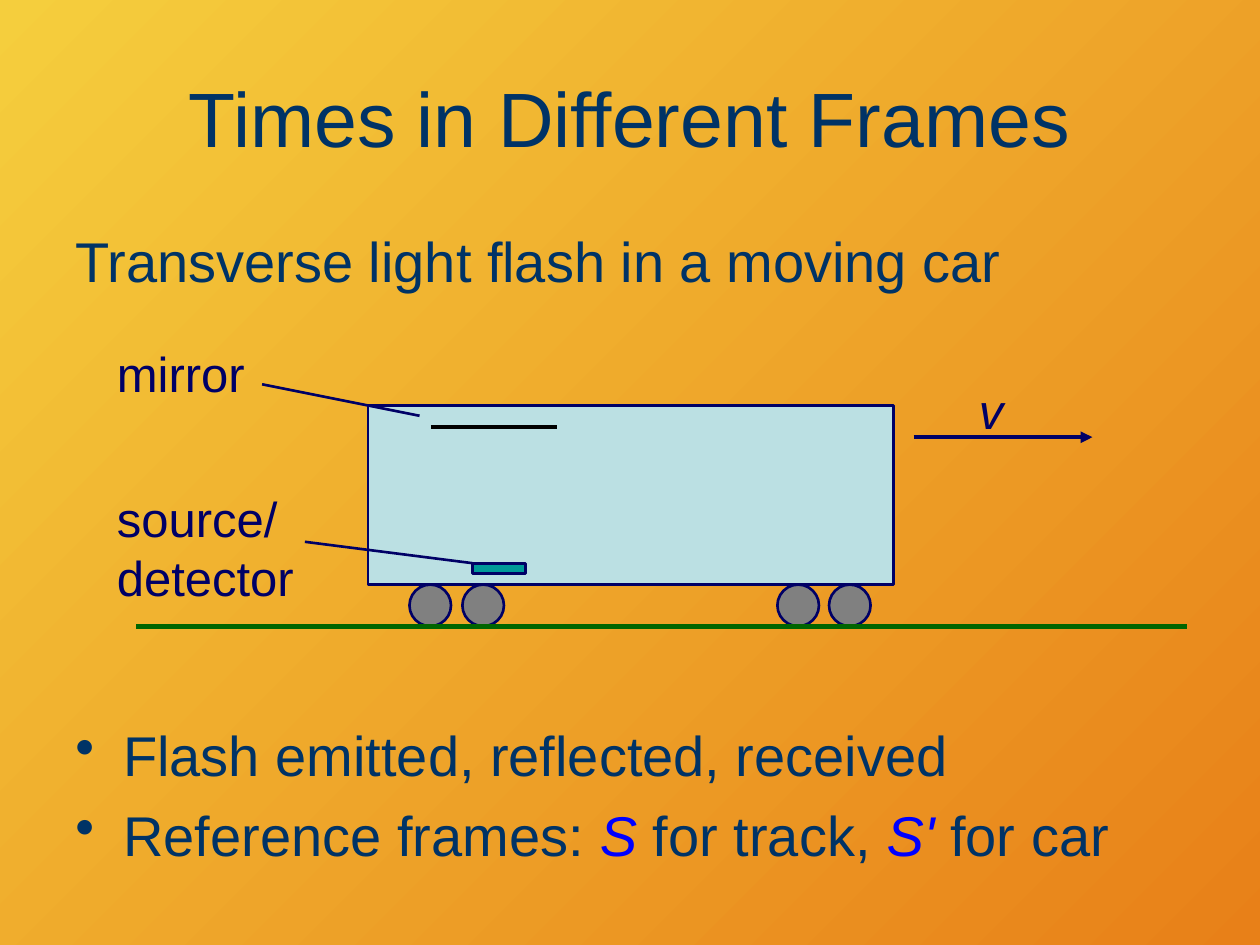
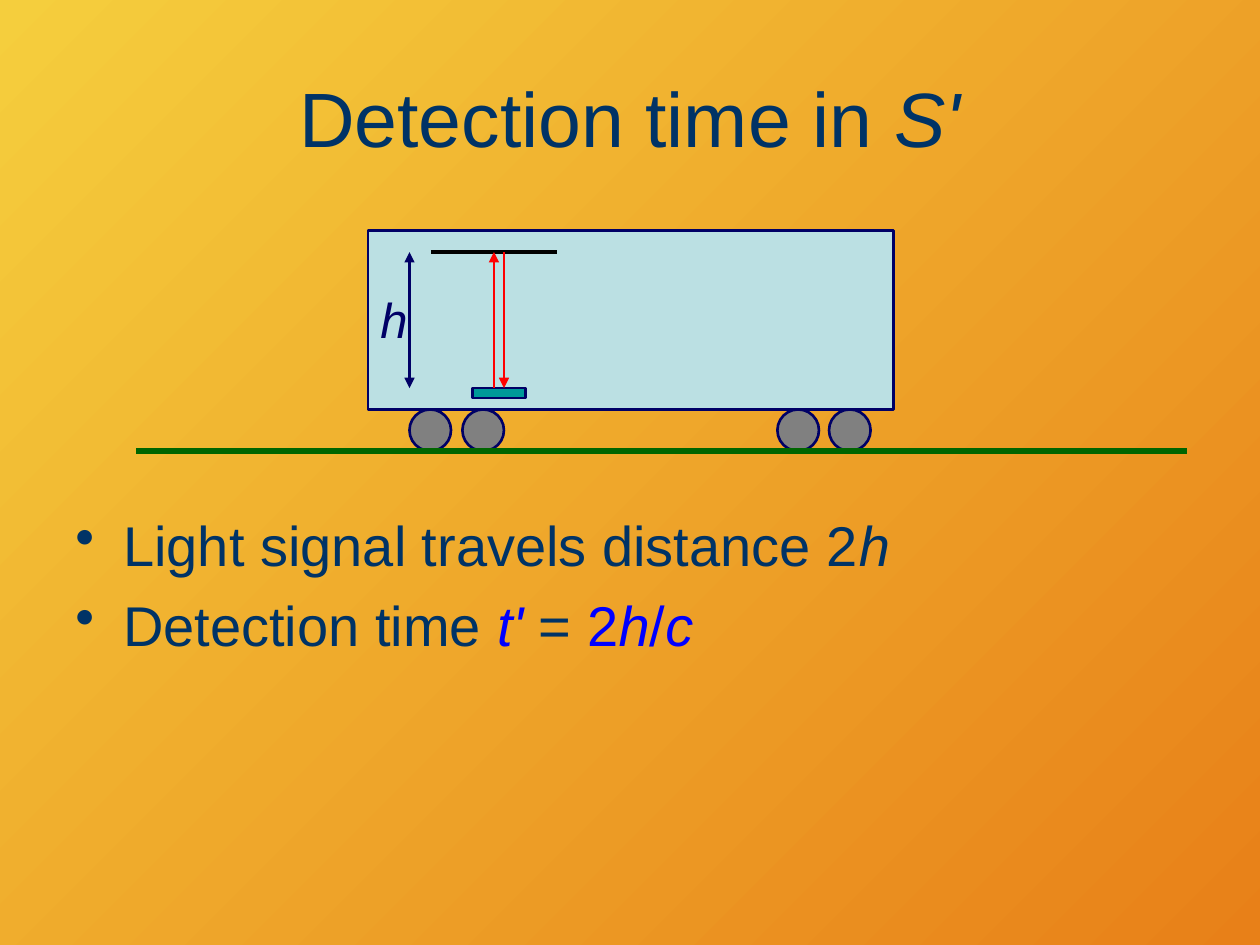
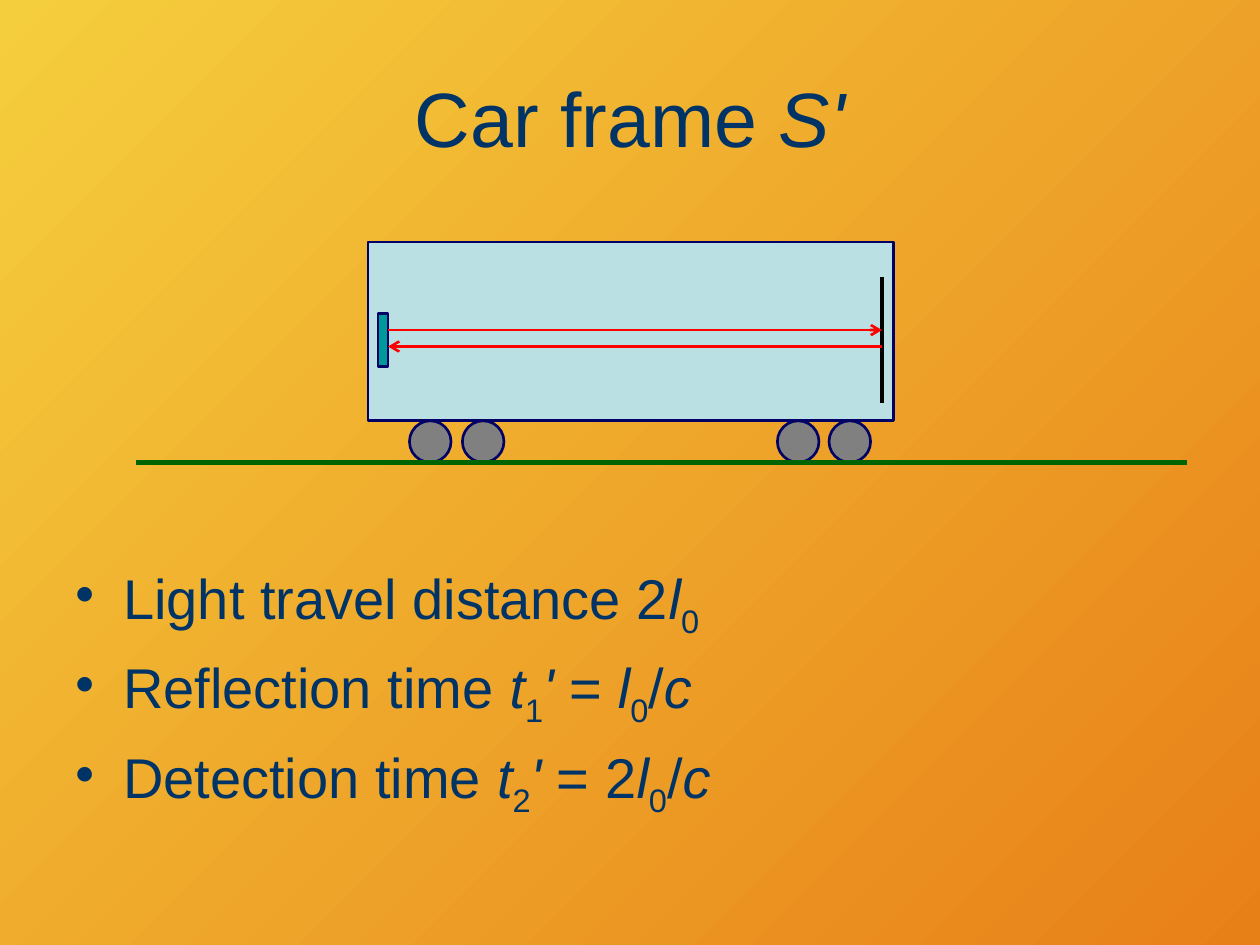
from lxml.etree import SubElement
from pptx import Presentation
from pptx.dml.color import RGBColor
from pptx.enum.shapes import MSO_CONNECTOR, MSO_SHAPE
from pptx.enum.text import MSO_ANCHOR, PP_ALIGN
from pptx.oxml.ns import qn
from pptx.util import Inches, Pt

YELLOW = RGBColor(0xF5, 0xCE, 0x3D)
ORANGE = RGBColor(0xE8, 0x80, 0x18)
TEXT_BLUE = RGBColor(0x00, 0x33, 0x66)
NAVY = RGBColor(0x00, 0x00, 0x66)
BRIGHT_BLUE = RGBColor(0x00, 0x00, 0xFF)
CAR_BLUE = RGBColor(0xBB, 0xE0, 0xE3)
WHEEL_GRAY = RGBColor(0x80, 0x80, 0x80)
TEAL = RGBColor(0x00, 0x99, 0x99)
TRACK_GREEN = RGBColor(0x00, 0x65, 0x00)
BLACK = RGBColor(0x00, 0x00, 0x00)
RED = RGBColor(0xFF, 0x00, 0x00)

CAR_LEFT, CAR_WIDTH, CAR_HEIGHT = 2.92, 4.17, 1.42
WHEEL_SIZE = 0.33


def write(page, place, paragraphs, size, color=TEXT_BLUE, bullets=False, wrap=True):
    box = page.shapes.add_textbox(*map(Inches, place))
    frame = box.text_frame
    frame.word_wrap = wrap
    for index, spans in enumerate(paragraphs):
        para = frame.add_paragraph() if index else frame.paragraphs[0]
        if bullets:
            properties = para._p.get_or_add_pPr()
            properties.set("marL", str(Inches(0.38)))
            properties.set("indent", str(Inches(-0.38)))
            SubElement(properties, qn("a:buChar"), char="•")
            if index:
                para.space_before = Pt(7.5)
        para.font.name = "Arial"
        para.font.size = Pt(size)
        para.font.color.rgb = color
        for text, *styles in spans:
            span = para.add_run()
            span.text = text
            if "italic" in styles:
                span.font.italic = True
            if "blue" in styles:
                span.font.color.rgb = BRIGHT_BLUE
            if "sub" in styles:
                span._r.get_or_add_rPr().set("baseline", "-25000")
    return frame


def draw_line(page, start, end, color, width, head=None, tail=None):
    line = page.shapes.add_connector(
        MSO_CONNECTOR.STRAIGHT, *map(Inches, (*start, *end)))
    line.line.color.rgb = color
    line.line.width = Pt(width)
    outline = line.line._get_or_add_ln()
    for tag, arrow in (("a:headEnd", head), ("a:tailEnd", tail)):
        if arrow:
            SubElement(outline, qn(tag), type=arrow)
    SubElement(line._element.spPr, qn("a:effectLst"))


deck = Presentation()
deck.slide_width = Inches(10)
deck.slide_height = Inches(7.5)
background = deck.slide_master.background.fill
background.gradient()
background.gradient_angle = 315
for stop, color in zip(background.gradient_stops, (YELLOW, ORANGE)):
    stop.color.rgb = color

ACROSS_DETECTOR = (3.75, 1.25, 0.42, 0.08)
ACROSS_MIRROR = ((3.42, 0.17), (4.42, 0.17))
scenes = [
    ([("Times in Different Frames",)], 3.22, ACROSS_DETECTOR, ACROSS_MIRROR,
     (5.67, 1.25), [
        [("Flash emitted, reflected, received",)],
        [("Reference frames: ",), ("S", "italic", "blue"), (" for track, ",),
         ("S'", "italic", "blue"), (" for car",)],
    ]),
    ([("Detection time in ",), ("S'", "italic")], 1.83, ACROSS_DETECTOR, ACROSS_MIRROR,
     (4, 2.7), [
        [("Light signal travels distance 2",), ("h", "italic")],
        [("Detection time ",), ("t'", "italic", "blue"), (" = ",), ("2", "blue"),
         ("h", "italic", "blue"), ("/", "blue"), ("c", "italic", "blue")],
    ]),
    ([("Car frame ",), ("S'", "italic")], 1.92, (3, 0.57, 0.08, 0.42),
     ((7, 0.28), (7, 1.28)), (4.42, 2.25), [
        [("Light travel distance 2",), ("l", "italic"), ("0", "sub")],
        [("Reflection time ",), ("t", "italic"), ("1", "sub"), ("'", "italic"), (" = ",),
         ("l", "italic"), ("0", "sub"), ("/",), ("c", "italic")],
        [("Detection time ",), ("t", "italic"), ("2", "sub"), ("'", "italic"), (" = 2",),
         ("l", "italic"), ("0", "sub"), ("/",), ("c", "italic")],
    ]),
]

pages = []
for title, car_top, detector, mirror, (body_top, body_height), points in scenes:
    page = deck.slides.add_slide(deck.slide_layouts[6])
    pages.append(page)
    title_frame = write(page, (0.5, 0.3, 9, 1.25), [title], 44)
    title_frame.vertical_anchor = MSO_ANCHOR.MIDDLE
    title_frame.paragraphs[0].alignment = PP_ALIGN.CENTER
    write(page, (0.5, body_top, 9, body_height), points, 32, bullets=True)

    parts = [(MSO_SHAPE.RECTANGLE, (CAR_LEFT, 0, CAR_WIDTH, CAR_HEIGHT), CAR_BLUE)]
    for wheel_left in (3.25, 3.67, 6.17, 6.58):
        wheel = (wheel_left, CAR_HEIGHT, WHEEL_SIZE, WHEEL_SIZE)
        parts.append((MSO_SHAPE.OVAL, wheel, WHEEL_GRAY))
    parts.append((MSO_SHAPE.RECTANGLE, detector, TEAL))
    for kind, (left, drop, width, height), fill in parts:
        part = page.shapes.add_shape(
            kind, *map(Inches, (left, car_top + drop, width, height)))
        part.shadow.inherit = False
        part.fill.solid()
        part.fill.fore_color.rgb = fill
        part.line.color.rgb = NAVY
        part.line.width = Pt(1.5)

    mirror_start, mirror_end = [(x, car_top + drop) for x, drop in mirror]
    draw_line(page, mirror_start, mirror_end, BLACK, 2.25)
    track_top = car_top + CAR_HEIGHT + WHEEL_SIZE
    draw_line(page, (1.08, track_top), (9.42, track_top), TRACK_GREEN, 3)

moving_page, transverse_page, lengthwise_page = pages

write(moving_page, (0.5, 1.75, 9, 0.83), [[("Transverse light flash in a moving car",)]], 32)
labels = [
    (moving_page, (7.67, 2.97, 0.4, 0.57), [[("v", "italic")]]),
    (moving_page, (0.83, 3.83, 1.61, 1.03), [[("source/",)], [("detector",)]]),
    (moving_page, (0.83, 2.68, 1.22, 0.57), [[("mirror",)]]),
    (transverse_page, (2.92, 2.25, 0.42, 0.57), [[("h", "italic")]]),
]
for page, place, words in labels:
    write(page, place, words, 28, NAVY, wrap=False)

draw_line(moving_page, (7.25, 3.47), (8.67, 3.47), NAVY, 2.25, tail="triangle")
draw_line(moving_page, (2.42, 4.3), (3.75, 4.47), NAVY, 1.5)
draw_line(moving_page, (2.08, 3.05), (3.33, 3.3), NAVY, 1.5)

draw_line(transverse_page, (3.25, 2), (3.25, 3.08), NAVY, 1.5, "triangle", "triangle")
draw_line(transverse_page, (3.92, 3.08), (3.92, 2), RED, 0.75, tail="triangle")
draw_line(transverse_page, (4, 2), (4, 3.08), RED, 0.75, tail="triangle")

draw_line(lengthwise_page, (3.08, 2.62), (7, 2.62), RED, 1.5, tail="arrow")
draw_line(lengthwise_page, (7, 2.75), (3.08, 2.75), RED, 1.5, tail="arrow")

deck.save("out.pptx")
